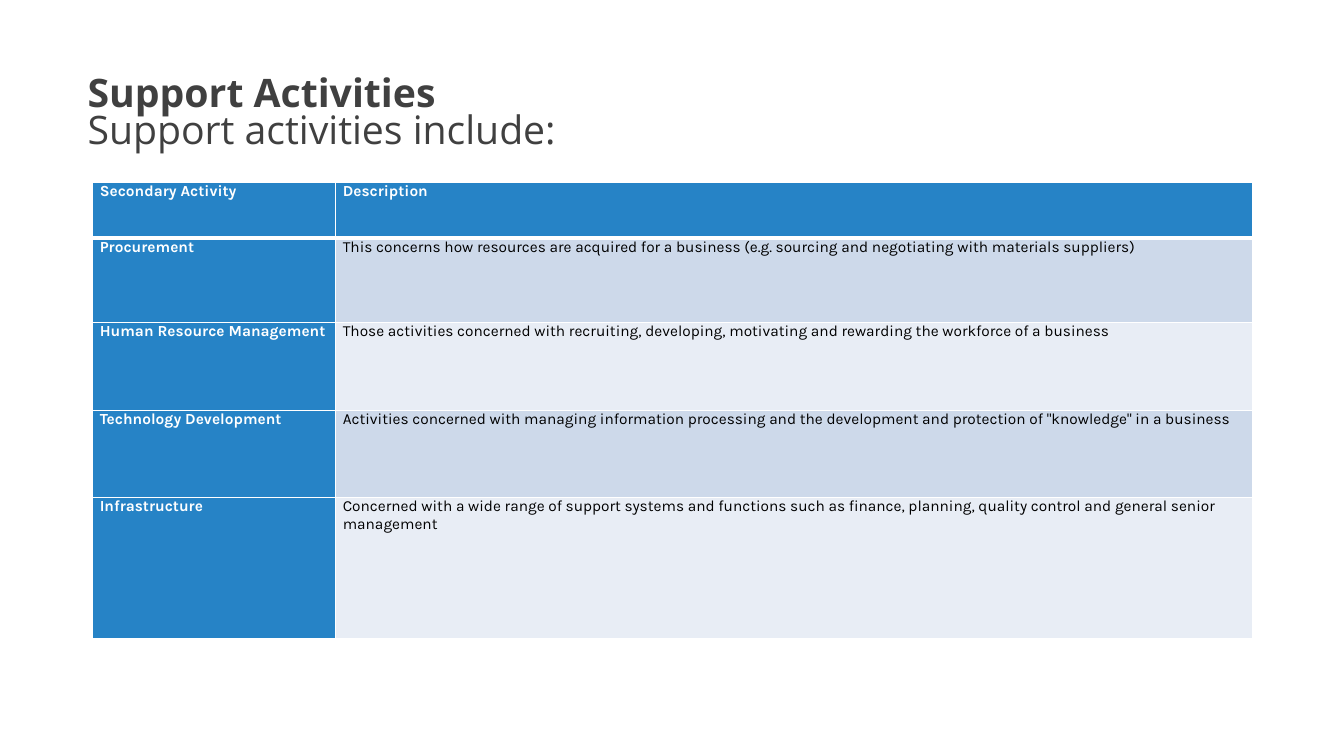
from lxml.etree import SubElement
from pptx import Presentation
from pptx.dml.color import RGBColor
from pptx.enum.text import MSO_ANCHOR as Anchor
from pptx.oxml.ns import qn
from pptx.util import Inches, Pt


def color(value):
    return RGBColor.from_string(value)


def add_border(cell, side, points):
    properties = cell._tc.get_or_add_tcPr()
    line = SubElement(properties, qn(f"a:{side}"), w=str(Pt(points)))
    fill = SubElement(line, qn("a:solidFill"))
    SubElement(fill, qn("a:srgbClr"), val="FFFFFF")


deck = Presentation()
deck.slide_width = Inches(13.33)
deck.slide_height = Inches(7.5)
page = deck.slides.add_slide(deck.slide_layouts[6])

title = page.shapes.add_textbox(Inches(0.77), Inches(0.6), Inches(11.51), Inches(0.96))
frame = title.text_frame
frame.word_wrap = True
frame.vertical_anchor = Anchor.BOTTOM
frame.text = "Support Activities\vSupport activities include:"
para = frame.paragraphs[0]
para.line_spacing = 0.8
for index, span in enumerate(para.runs):
    span.font.name = "Open Sans"
    span.font.size = Pt(28)
    span.font.bold = index == 0
    span.font.color.rgb = color("404040")

activities = [
    ("Secondary Activity", "Description"),
    ("Procurement",
     "This concerns how resources are acquired for a business "
     "(e.g. sourcing and negotiating with materials suppliers)"),
    ("Human Resource Management",
     "Those activities concerned with recruiting, developing, motivating "
     "and rewarding the workforce of a business"),
    ("Technology Development",
     "Activities concerned with managing information processing and the "
     'development and protection of "knowledge" in a business'),
    ("Infrastructure",
     "Concerned with a wide range of support systems and functions such as "
     "finance, planning, quality control and general senior management"),
]
column_widths = [2.41, 9.09]
row_heights = [0.55, 0.84, 0.87, 0.87, 1.4]

table = page.shapes.add_table(
    len(activities), 2, Inches(0.92), Inches(1.81),
    Inches(sum(column_widths)), Inches(sum(row_heights))).table
for column, width in zip(table.columns, column_widths):
    column.width = Inches(width)

for row_index, (texts, height) in enumerate(zip(activities, row_heights)):
    table.rows[row_index].height = Inches(height)
    for column_index, text in enumerate(texts):
        heading = row_index == 0 or column_index == 0
        band = "CDD9EA" if row_index % 2 else "E8EDF5"
        cell = table.cell(row_index, column_index)
        cell.margin_left = cell.margin_right = Inches(0.07)
        cell.margin_top = cell.margin_bottom = 0
        cell.vertical_anchor = Anchor.TOP
        for side in ("lnL", "lnR", "lnT", "lnB"):
            thick = (row_index, side) in ((0, "lnB"), (1, "lnT"))
            add_border(cell, side, 3 if thick else 1)
        cell.fill.solid()
        cell.fill.fore_color.rgb = color("2683C6" if heading else band)
        cell.text_frame.text = text
        span = cell.text_frame.paragraphs[0].runs[0]
        span.font.name = "Karla"
        span.font.size = Pt(11)
        span.font.bold = heading
        span.font.color.rgb = color("FFFFFF" if heading else "000000")

deck.save("out.pptx")
